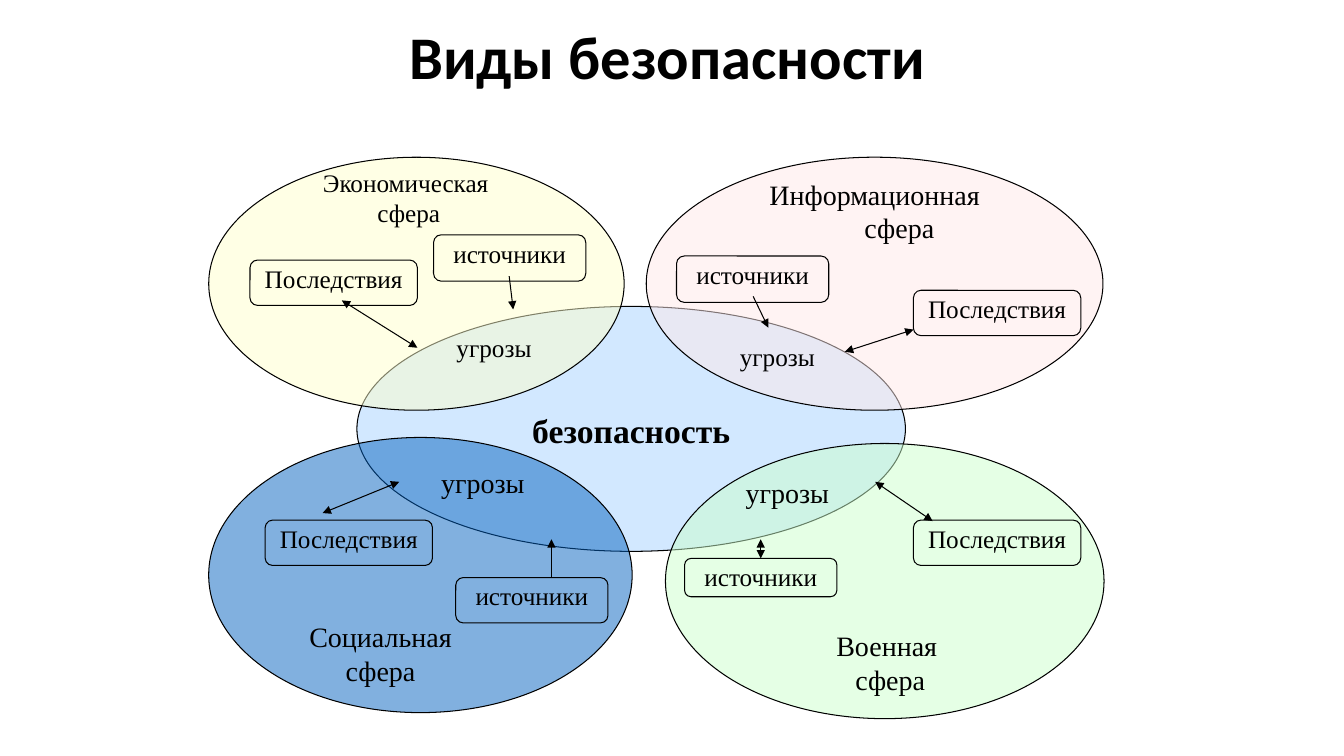
import dataclasses

import pptx
import pptx.dml.color
import pptx.enum.shapes
import pptx.enum.text
import pptx.oxml
import pptx.oxml.ns
import pptx.util

Inches = pptx.util.Inches
RGBColor = pptx.dml.color.RGBColor
SHAPE = pptx.enum.shapes.MSO_SHAPE
ALIGN = pptx.enum.text.PP_ALIGN

BLACK = RGBColor(0x00, 0x00, 0x00)
SKY = RGBColor(0xD2, 0xE8, 0xFF)
BLUE = RGBColor(0x05, 0x63, 0xC1)
GREEN = RGBColor(0xCC, 0xFF, 0xCC)
YELLOW = RGBColor(0xFF, 0xFF, 0xCD)
PINK = RGBColor(0xFF, 0xE9, 0xE9)

LINE_WIDTH = pptx.util.Pt(0.75)


@dataclasses.dataclass
class Sphere:
    """One sphere; every position inside it is relative to the box corner."""
    box: tuple
    color: RGBColor
    caption: list
    caption_box: tuple
    consequences: tuple
    sources: tuple
    threats: tuple
    consequence_link: tuple
    source_link: tuple
    source_height: float = 0.45
    caption_size: int = 20
    threat_size: int = 20
    caption_kind: int = SHAPE.ROUNDED_RECTANGLE
    last_line_indent: float = 0
    two_way_source: bool = False


SPHERES = [
    Sphere((2.07, 4.34, 4.2, 2.73), BLUE, ["Социальная", "сфера"],
           (0.12, 1.76, 3.17, 0.76), (0.56, 0.82), (2.45, 1.39), (1.89, 0.24),
           (1.13, 0.75, 1.89, 0.44), (3.4, 1.39, 3.4, 1.01)),
    Sphere((6.6, 4.4, 4.35, 2.73), GREEN, ["Военная ", "сфера"],
           (0.49, 1.79, 3.48, 0.76), (2.46, 0.76), (0.19, 1.14), (0.38, 0.28),
           (2.65, 0.77, 2.08, 0.38), (0.94, 1.14, 0.94, 0.95),
           source_height=0.38, two_way_source=True),
    Sphere((2.07, 1.56, 4.12, 2.51), YELLOW, ["Экономическая ", "сфера"],
           (0.85, 0.09, 2.27, 0.76), (0.41, 1.02), (2.23, 0.77), (2.0, 1.7),
           (1.32, 1.42, 2.07, 1.89), (2.98, 1.18, 3.02, 1.51),
           source_height=0.46, caption_size=18, threat_size=18,
           caption_kind=SHAPE.RECTANGLE),
    Sphere((6.41, 1.56, 4.53, 2.51), PINK, ["Информационная", "сфера"],
           (0.68, 0.19, 3.17, 0.76), (2.65, 1.32), (0.3, 0.98), (0.47, 1.79),
           (2.65, 1.71, 1.97, 1.93), (1.06, 1.38, 1.21, 1.69),
           source_height=0.46, threat_size=18, caption_kind=SHAPE.RECTANGLE,
           last_line_indent=0.49),
]


def write_text(shape, lines, size=18, font="Times New Roman", bold=False,
               align=ALIGN.CENTER, inset=0.01, spacing=1.0, last_line_indent=0):
    frame = shape.text_frame
    frame.word_wrap = True
    frame.vertical_anchor = pptx.enum.text.MSO_ANCHOR.TOP
    frame.margin_left = frame.margin_right = Inches(inset)
    frame.margin_top = frame.margin_bottom = Inches(0.01)
    for index, line in enumerate(lines):
        paragraph = frame.add_paragraph() if index else frame.paragraphs[0]
        paragraph.alignment = align
        paragraph.line_spacing = spacing
        run = paragraph.add_run()
        run.text = line
        run.font.size = pptx.util.Pt(size)
        run.font.name = font
        run.font.bold = bold
        run.font.color.rgb = BLACK
    if last_line_indent:
        paragraph._p.get_or_add_pPr().set("marL", str(Inches(last_line_indent)))


def add_block(slide, kind, box, fill=None, opacity=100, outlined=False):
    shape = slide.shapes.add_shape(kind, *map(Inches, box))
    shape.shadow.inherit = False
    if fill is None:
        shape.fill.background()
    else:
        shape.fill.solid()
        shape.fill.fore_color.rgb = fill
        if opacity < 100:
            color = shape.fill._xPr.find(".//" + pptx.oxml.ns.qn("a:srgbClr"))
            alpha = color.makeelement(pptx.oxml.ns.qn("a:alpha"),
                                      {"val": str(opacity * 1000)})
            color.append(alpha)
    if outlined:
        shape.line.color.rgb = BLACK
        shape.line.width = LINE_WIDTH
    else:
        shape.line.fill.background()
    return shape


def add_label(slide, box, lines, kind=SHAPE.ROUNDED_RECTANGLE, fill=None,
              outlined=False, **text_format):
    shape = add_block(slide, kind, box, fill=fill, outlined=outlined)
    write_text(shape, lines, **text_format)
    return shape


def add_arrow(slide, ends, two_way):
    connector = slide.shapes.add_connector(
        pptx.enum.shapes.MSO_CONNECTOR.STRAIGHT, *map(Inches, ends))
    connector.line.color.rgb = BLACK
    connector.line.width = LINE_WIDTH
    line = connector.line._get_or_add_ln()
    for tag in ["a:headEnd", "a:tailEnd"] if two_way else ["a:tailEnd"]:
        line.append(line.makeelement(pptx.oxml.ns.qn(tag), {"type": "triangle"}))
    properties = connector._element.spPr
    properties.append(properties.makeelement(pptx.oxml.ns.qn("a:effectLst"), {}))
    return connector


def add_title(slide, box):
    title = slide.shapes.add_textbox(*map(Inches, box))
    write_text(title, ["Виды безопасности"], size=43.2, font="Calibri",
               bold=True, align=ALIGN.LEFT, inset=0.1, spacing=0.9)


def add_core(slide, box):
    left, top, width, height = box
    add_block(slide, SHAPE.OVAL, box, fill=SKY, outlined=True)
    add_label(slide, (left + 1.36, top + 0.98, width / 2, 0.75),
              ["безопасность"], fill=SKY, size=24, bold=True)


def add_sphere(slide, sphere):
    left, top = sphere.box[:2]

    def place(x, y, *size):
        return (left + x, top + y, *size)

    def place_ends(x1, y1, x2, y2):
        return place(x1, y1) + place(x2, y2)

    add_block(slide, SHAPE.OVAL, sphere.box, fill=sphere.color, opacity=50,
              outlined=True)
    add_label(slide, place(*sphere.caption_box), sphere.caption,
              kind=sphere.caption_kind, size=sphere.caption_size,
              last_line_indent=sphere.last_line_indent)
    add_label(slide, place(*sphere.consequences, 1.66, 0.45), ["Последствия"],
              outlined=True)
    sources = add_label(slide, place(*sphere.sources, 1.51, sphere.source_height),
                        ["источники"], outlined=True)
    add_label(slide, place(*sphere.threats, 1.66, 0.61), ["угрозы"],
              size=sphere.threat_size)
    add_arrow(slide, place_ends(*sphere.consequence_link), two_way=True)
    source_arrow = add_arrow(slide, place_ends(*sphere.source_link),
                             two_way=sphere.two_way_source)
    if sphere.two_way_source:
        source_arrow.begin_connect(sources, 0)
        source_arrow.end_x = source_arrow.begin_x


def main():
    presentation = pptx.Presentation()
    presentation.slide_width = Inches(13.33)
    presentation.slide_height = Inches(7.5)
    slide = presentation.slides.add_slide(presentation.slide_layouts[6])
    add_title(slide, (3.96, 0.26, 5.48, 1.25))
    add_core(slide, (3.54, 3.04, 5.44, 2.43))
    for sphere in SPHERES:
        add_sphere(slide, sphere)
    presentation.save("out.pptx")


if __name__ == "__main__":
    main()
